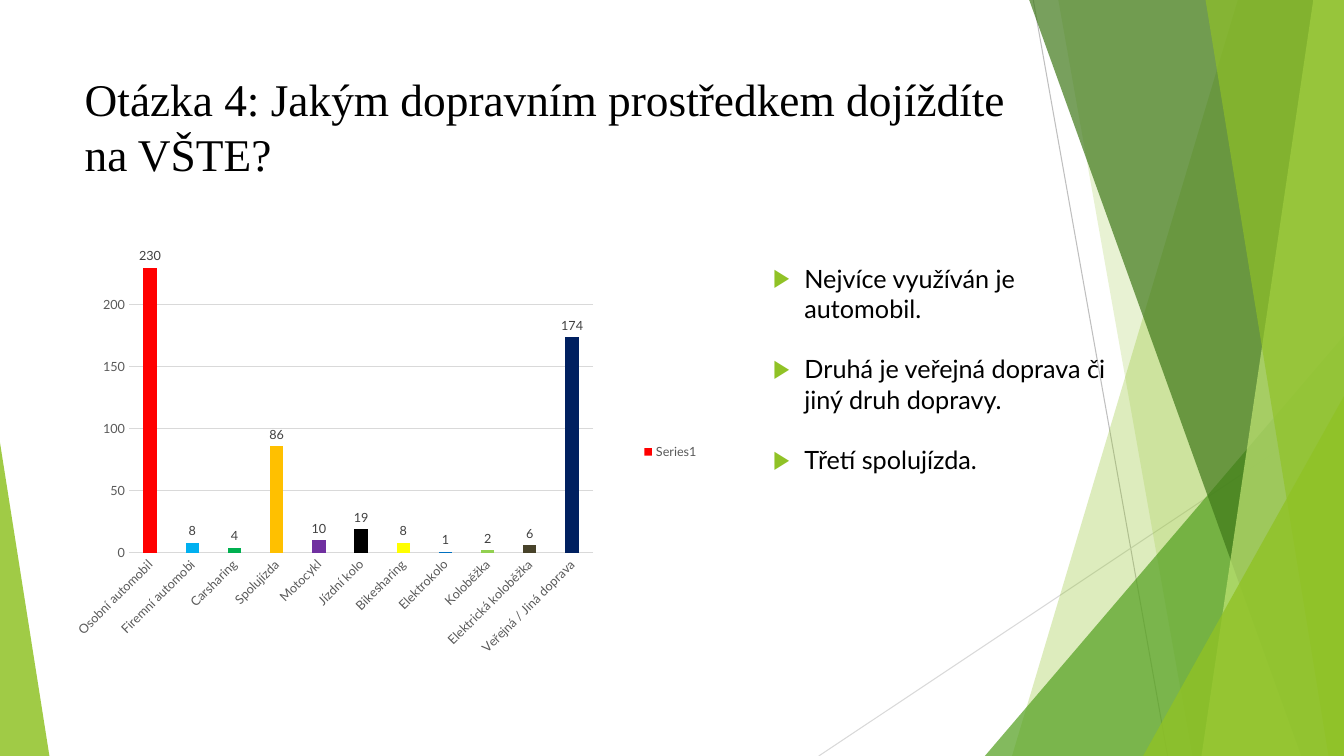
from dataclasses import dataclass

from lxml.etree import SubElement
from pptx import Presentation
from pptx.chart.data import CategoryChartData
from pptx.dml.color import RGBColor
from pptx.enum.chart import XL_CHART_TYPE, XL_LABEL_POSITION, XL_LEGEND_POSITION, XL_TICK_MARK
from pptx.enum.shapes import MSO_CONNECTOR, MSO_SHAPE
from pptx.enum.text import MSO_ANCHOR, MSO_AUTO_SIZE, PP_ALIGN
from pptx.oxml.ns import qn
from pptx.util import Emu, Inches, Pt


@dataclass(frozen=True)
class Theme:
    title_font: str = "Times New Roman"
    font: str = "Lato"
    title_size: float = 32.4
    body_size: float = 18
    chart_size: float = 9
    text: str = "000000"
    axis_text: str = "595959"
    label_text: str = "404040"
    grid: str = "D9D9D9"
    ray: str = "BFBFBF"
    accent: str = "90C226"
    leaf: str = "54A021"
    forest: str = "3F7819"
    lime: str = "C0E474"


@dataclass(frozen=True)
class Box:
    """Percent of the slide's width and height."""
    left: float
    top: float
    width: float
    height: float


@dataclass(frozen=True)
class Ray:
    start: tuple[float, float]
    end: tuple[float, float]
    color: str


@dataclass(frozen=True)
class Band:
    """Fills from a slanted left edge to the right side of the slide."""
    top_x: float
    bottom_x: float
    color: str
    opacity: int


@dataclass(frozen=True)
class Corner:
    box: Box
    apex: float
    color: str
    opacity: int


@dataclass(frozen=True)
class Bar:
    name: str
    value: int
    color: str


T = Theme()
WIDTH, HEIGHT = Inches(13.333), Inches(7.5)

RAYS = [Ray((76.88, 0), (86.88, 100), T.ray), Ray((100, 53.73), (60.92, 100), T.grid)]
DECOR = [
    Band(92.1, 75.3, T.accent, 30),
    Band(78.75, 88.72, T.accent, 20),
    Corner(Box(73.28, 44.4, 26.72, 55.6), 1, T.leaf, 72),
    Band(76.58, 96.82, T.forest, 70),
    Band(97.72, 89.4, T.lime, 70),
    Band(89.7, 98.85, T.accent, 65),
    Corner(Box(85.05, 52.4, 14.95, 47.6), 1, T.accent, 80),
    Corner(Box(0, 58.53, 3.68, 41.47), 0, T.accent, 85),
]
BARS = [
    Bar("Osobní automobil", 230, "FF0000"),
    Bar("Firemní automobi", 8, "00B0F0"),
    Bar("Carsharing", 4, "00B050"),
    Bar("Spolujízda", 86, "FFC000"),
    Bar("Motocykl", 10, "7030A0"),
    Bar("Jízdní kolo", 19, "000000"),
    Bar("Bikesharing", 8, "FFFF00"),
    Bar("Elektrokolo", 1, "0070C0"),
    Bar("Koloběžka", 2, "92D050"),
    Bar("Elektrická koloběžka", 6, "48432A"),
    Bar("Veřejná / Jiná doprava", 174, "002060"),
]
TITLE = "Otázka 4: Jakým dopravním prostředkem dojíždíte na VŠTE?"
FINDINGS = [
    "Nejvíce využíván je automobil.",
    "Druhá je veřejná doprava či jiný druh dopravy.",
    "Třetí spolujízda.",
]


def px(share: float) -> Emu:
    return Emu(round(WIDTH * share / 100))


def py(share: float) -> Emu:
    return Emu(round(HEIGHT * share / 100))


def bounds(box: Box) -> tuple[Emu, Emu, Emu, Emu]:
    return px(box.left), py(box.top), px(box.width), py(box.height)


def rgb(color: str) -> RGBColor:
    return RGBColor.from_string(color)


def style_font(font, name: str, size: float, color: str) -> None:
    font.name, font.size = name, Pt(size)
    font.color.rgb = rgb(color)


def style_line(line, color: str) -> None:
    line.color.rgb = rgb(color)
    line.width = Pt(0.75)


def draw_ray(s, ray: Ray) -> None:
    line = s.shapes.add_connector(
        MSO_CONNECTOR.STRAIGHT, px(ray.start[0]), py(ray.start[1]), px(ray.end[0]), py(ray.end[1]))
    style_line(line.line, ray.color)
    SubElement(line._element.spPr, qn("a:effectLst"))


def draw_decor(s, part: Band | Corner) -> None:
    if isinstance(part, Band):
        outline = s.shapes.build_freeform(px(part.top_x), 0)
        outline.add_line_segments([(WIDTH, 0), (WIDTH, HEIGHT), (px(part.bottom_x), HEIGHT)])
        sp = outline.convert_to_shape()
    else:
        sp = s.shapes.add_shape(MSO_SHAPE.ISOSCELES_TRIANGLE, *bounds(part.box))
        sp.adjustments[0] = part.apex
    sp.shadow.inherit = False
    sp.line.fill.background()
    sp.fill.solid()
    sp.fill.fore_color.rgb = rgb(part.color)
    color = sp._element.spPr.find(qn("a:solidFill"))[0]
    SubElement(color, qn("a:alpha"), val=str(part.opacity * 1000))


def place_text(s, sp, box: Box):
    """Puts a placeholder above the decoration and returns its text frame."""
    sp.left, sp.top, sp.width, sp.height = bounds(box)
    s.shapes._spTree.append(sp._element)
    tf = sp.text_frame
    tf.word_wrap, tf.auto_size, tf.vertical_anchor = True, MSO_AUTO_SIZE.NONE, MSO_ANCHOR.TOP
    return tf


def add_run(p, text: str, font: str, size: float) -> None:
    p.alignment = PP_ALIGN.LEFT
    r = p.add_run()
    r.text = text
    style_font(r.font, font, size, T.text)


def set_bullet(p) -> None:
    pPr = p._p.get_or_add_pPr()
    pPr.set("marL", str(Inches(0.31)))
    pPr.set("indent", str(-Inches(0.31)))
    SubElement(SubElement(pPr, qn("a:buClr")), qn("a:srgbClr"), val=T.accent)
    SubElement(pPr, qn("a:buChar"), char="▶")


def set_layout(element, index: int, modes: dict[str, str], **percents: float) -> None:
    """Places a chart part by percent of the chart's size."""
    layout = element.find(qn("c:layout"))
    if layout is None:
        layout = element.makeelement(qn("c:layout"))
        element.insert(index, layout)
    manual = SubElement(layout, qn("c:manualLayout"))
    shares = {name: str(percent / 100) for name, percent in percents.items()}
    for name, value in (modes | shares).items():
        SubElement(manual, qn(f"c:{name}"), val=value)


def draw_chart(s, box: Box) -> None:
    data = CategoryChartData()
    data.categories = [bar.name for bar in BARS]
    data.add_series("Series1", [bar.value for bar in BARS])
    chart = s.shapes.add_chart(XL_CHART_TYPE.COLUMN_CLUSTERED, *bounds(box), data).chart
    chart.has_title = False
    style_font(chart.font, T.font, T.chart_size, T.axis_text)

    # Axes
    for axis in (chart.category_axis, chart.value_axis):
        axis.major_tick_mark = axis.minor_tick_mark = XL_TICK_MARK.NONE
        style_font(axis.tick_labels.font, T.font, T.chart_size, T.axis_text)
    style_line(chart.category_axis.format.line, T.grid)
    chart.category_axis._element.find(f"{qn('c:txPr')}/{qn('a:bodyPr')}").set("rot", "-2700000")
    values = chart.value_axis
    values.minimum_scale, values.maximum_scale, values.major_unit = 0, 230, 50
    values.format.line.fill.background()
    style_line(values.major_gridlines.format.line, T.grid)

    # Columns and their values
    plot = chart.plots[0]
    plot.gap_width, plot.overlap, plot.vary_by_categories = 219, -27, False
    series = plot.series[0]
    for target, color in [(series, BARS[0].color)] + [
            (series.points[i], bar.color) for i, bar in enumerate(BARS) if i]:
        target.format.fill.solid()
        target.format.fill.fore_color.rgb = rgb(color)
    labels = series.data_labels
    labels.show_value, labels.position = True, XL_LABEL_POSITION.OUTSIDE_END
    style_font(labels.font, T.font, T.chart_size, T.label_text)

    # Legend and plot area
    chart.has_legend = True
    legend = chart.legend
    legend.position, legend.include_in_layout = XL_LEGEND_POSITION.RIGHT, False
    style_font(legend.font, T.font, T.chart_size, T.axis_text)
    edges = {"xMode": "edge", "yMode": "edge"}
    set_layout(chart._chartSpace.chart.plotArea, 0, {"layoutTarget": "inner"} | edges,
               x=8.2, y=7, w=70, h=66.7)
    set_layout(legend._element, 1, edges, x=85.3, y=47.3)


def main() -> None:
    prs = Presentation()
    prs.slide_width, prs.slide_height = WIDTH, HEIGHT
    s = prs.slides.add_slide(prs.slide_layouts[1])
    title, body = s.placeholders

    # Green decoration
    for ray in RAYS:
        draw_ray(s, ray)
    for part in DECOR:
        draw_decor(s, part)

    # Question
    p = place_text(s, title, Box(5.55, 8.8, 70.5, 19.2)).paragraphs[0]
    add_run(p, TITLE, T.title_font, T.title_size)

    # Answers
    draw_chart(s, Box(5.55, 31.47, 49.35, 56.53))

    # Findings
    tf = place_text(s, body, Box(56.78, 34.13, 27, 37.73))
    for i, finding in enumerate(FINDINGS):
        p = tf.add_paragraph() if i else tf.paragraphs[0]
        p.space_before = Pt(21.6 if i else 0)
        add_run(p, finding, T.font, T.body_size)
        set_bullet(p)

    prs.save("out.pptx")


if __name__ == "__main__":
    main()
